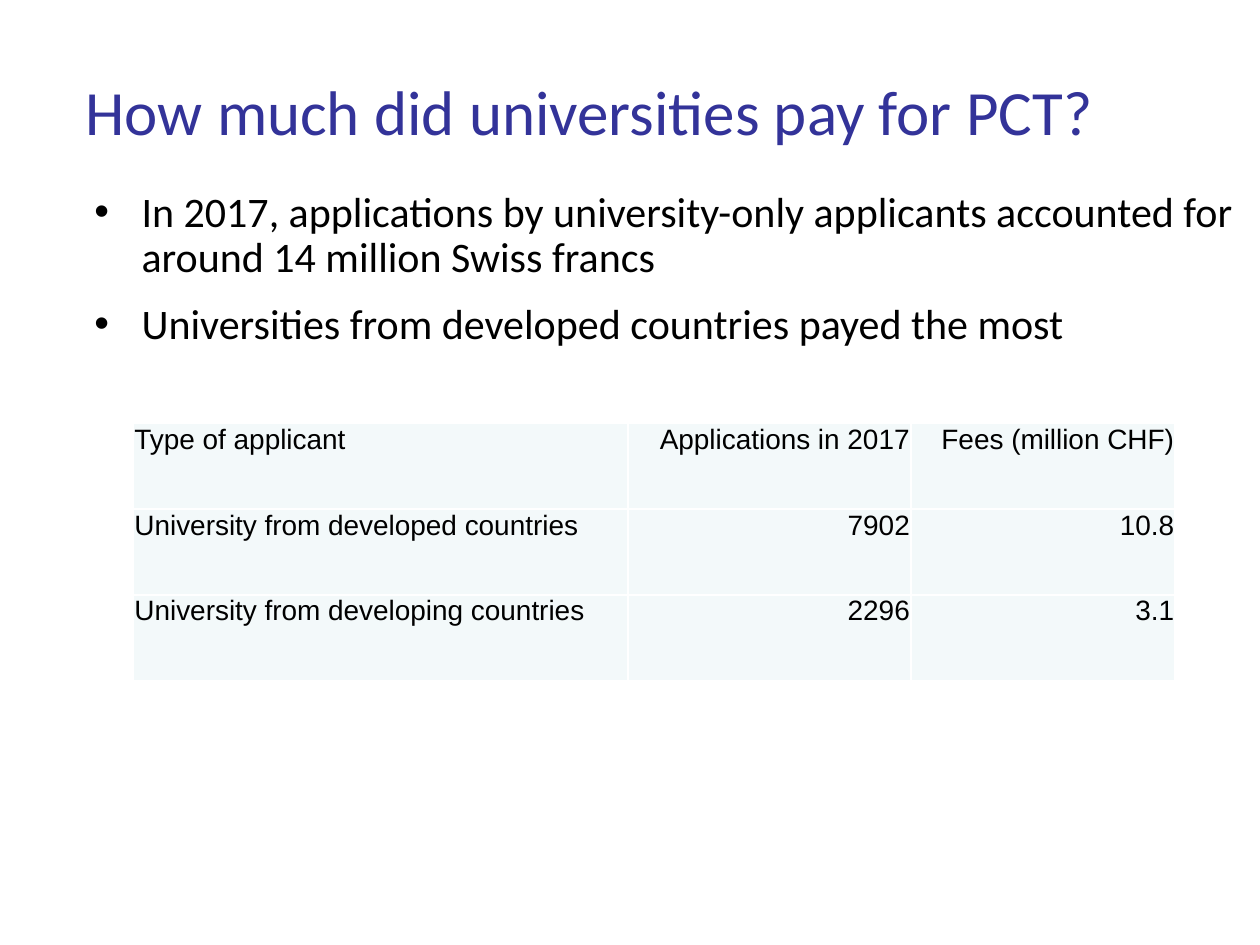
from lxml import etree
from pptx import Presentation
from pptx.dml.color import RGBColor
from pptx.enum import text
from pptx.oxml import ns
from pptx.util import Cm, Pt

TITLE = "How much did universities pay for PCT?"
BULLETS = [
    "In 2017, applications by university-only applicants accounted for around 14 million Swiss francs",
    "Universities from developed countries payed the most",
]
ROWS = [
    ("Type of applicant", "Applications in 2017", "Fees (million CHF)"),
    ("University from developed countries", "7902", "10.8"),
    ("University from developing countries", "2296", "3.1"),
]
COLUMN_WIDTHS = [9.97, 5.7, 5.33]
ROW_HEIGHT = 1.73
COLORS = {"title": "333399", "text": "000000", "cell": "F3F9FA", "border": "FFFFFF"}
FONTS = {
    "title": {"name": "Calibri", "size": Pt(36), "bold": False},
    "body": {"name": "Calibri", "size": Pt(24), "bold": False},
    "table": {"name": "Arial", "size": Pt(16), "bold": False},
}
PLACES = {
    "title": (1.47, 1.32, 22.43, 1.8),
    "body": (1.65, 3.73, 23.47, 12.4),
    "table": (2.69, 8.53, sum(COLUMN_WIDTHS), ROW_HEIGHT * len(ROWS)),
}
INDENT = Cm(0.95)


def set_values(target, values):
    for name, value in values.items():
        setattr(target, name, value)


def format_font(paragraph, style, color):
    set_values(paragraph.font, FONTS[style])
    paragraph.font.color.rgb = RGBColor.from_string(COLORS[color])


def place(shape, name):
    lengths = [Cm(length) for length in PLACES[name]]
    set_values(shape, dict(zip(("left", "top", "width", "height"), lengths)))


def add_bullet(paragraph):
    properties = paragraph._p.get_or_add_pPr()
    properties.set("marL", str(INDENT))
    properties.set("indent", str(-INDENT))
    etree.SubElement(properties, ns.qn("a:buFont")).set("typeface", "Arial")
    etree.SubElement(properties, ns.qn("a:buChar")).set("char", "•")


def add_borders(cell):
    properties = cell._tc.get_or_add_tcPr()
    for position, side in enumerate(("lnL", "lnR", "lnT", "lnB")):
        line = etree.Element(ns.qn(f"a:{side}"), w=str(Pt(1)))
        fill = etree.SubElement(line, ns.qn("a:solidFill"))
        etree.SubElement(fill, ns.qn("a:srgbClr")).set("val", COLORS["border"])
        properties.insert(position, line)


def fill_title(shape):
    place(shape, "title")
    frame = shape.text_frame
    set_values(frame, {"text": TITLE, "word_wrap": True,
                       "auto_size": text.MSO_AUTO_SIZE.NONE,
                       "vertical_anchor": text.MSO_ANCHOR.MIDDLE})
    paragraph = frame.paragraphs[0]
    paragraph.alignment = text.PP_ALIGN.LEFT
    format_font(paragraph, "title", "title")


def fill_body(shape):
    place(shape, "body")
    frame = shape.text_frame
    set_values(frame, {"text": "\n".join(BULLETS), "word_wrap": True,
                       "auto_size": text.MSO_AUTO_SIZE.NONE,
                       "vertical_anchor": text.MSO_ANCHOR.TOP})
    for index, paragraph in enumerate(frame.paragraphs):
        add_bullet(paragraph)
        set_values(paragraph, {"line_spacing": 0.9, "space_after": Pt(7),
                               "space_before": Pt(5 if index else 0)})
        format_font(paragraph, "body", "text")


def add_fee_table(slide):
    lengths = [Cm(length) for length in PLACES["table"]]
    table = slide.shapes.add_table(len(ROWS), len(COLUMN_WIDTHS), *lengths).table
    set_values(table, {"first_row": False, "horz_banding": False})
    for column, width in zip(table.columns, COLUMN_WIDTHS):
        column.width = Cm(width)
    for row, values in zip(table.rows, ROWS):
        row.height = Cm(ROW_HEIGHT)
        for index, (cell, value) in enumerate(zip(row.cells, values)):
            margin = Cm(0.02)
            set_values(cell, {"text": value, "margin_left": margin, "margin_right": margin,
                              "margin_top": margin, "margin_bottom": 0,
                              "vertical_anchor": text.MSO_ANCHOR.TOP})
            cell.fill.solid()
            cell.fill.fore_color.rgb = RGBColor.from_string(COLORS["cell"])
            add_borders(cell)
            paragraph = cell.text_frame.paragraphs[0]
            paragraph.alignment = text.PP_ALIGN.RIGHT if index else text.PP_ALIGN.LEFT
            format_font(paragraph, "table", "text")


def main():
    presentation = Presentation()
    set_values(presentation, {"slide_width": Cm(25.4), "slide_height": Cm(19.05)})
    slide = presentation.slides.add_slide(presentation.slide_layouts[1])
    fill_title(slide.shapes.title)
    fill_body(slide.placeholders[1])
    add_fee_table(slide)
    presentation.save("out.pptx")


if __name__ == "__main__":
    main()
